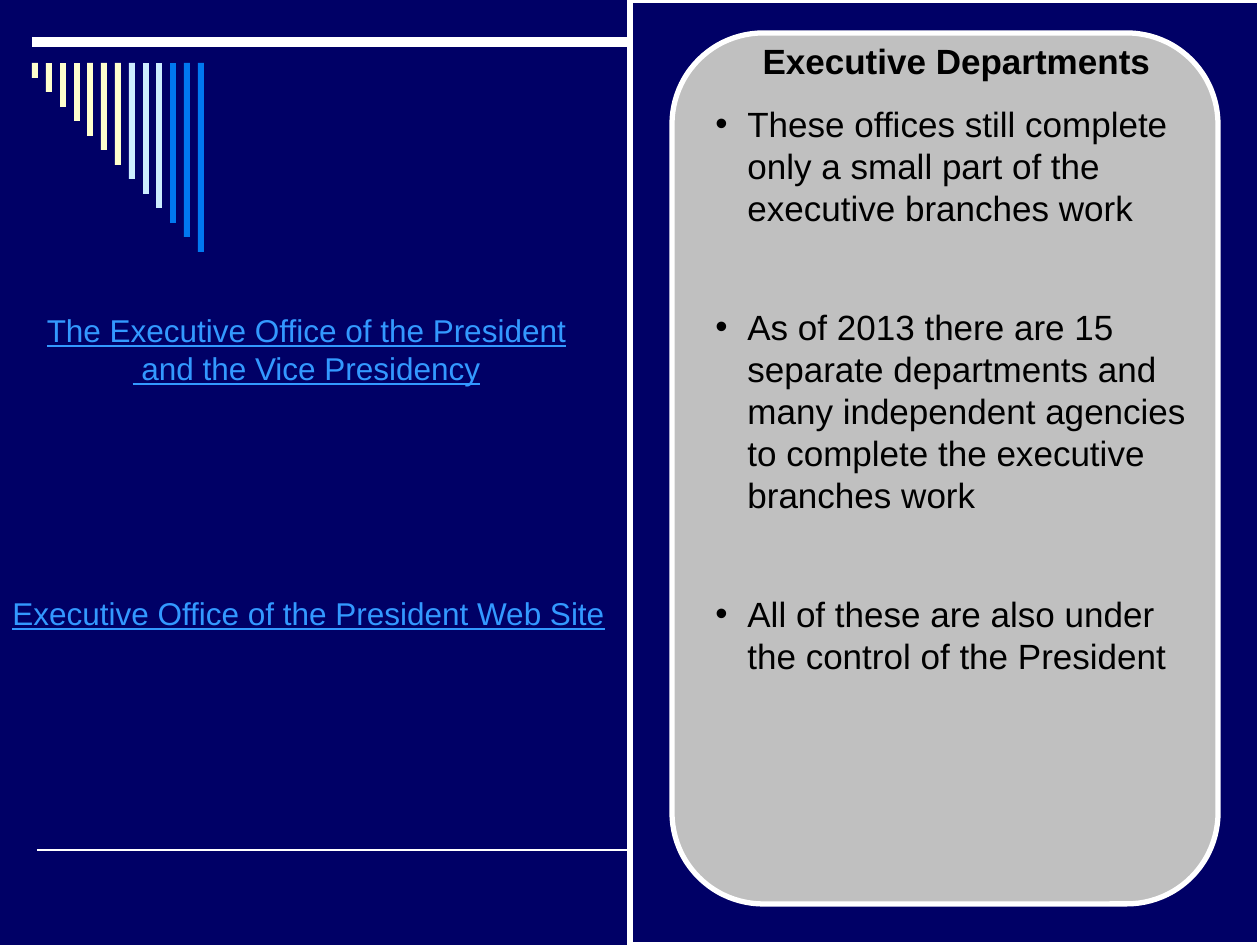
from dataclasses import dataclass

import lxml.etree
import pptx
import pptx.dml.color
import pptx.enum.shapes
import pptx.enum.text
import pptx.oxml.ns
import pptx.util

SHAPE = pptx.enum.shapes.MSO_SHAPE
ALIGN = pptx.enum.text.PP_ALIGN
PAGE_WIDTH, PAGE_HEIGHT = 1260, 945


@dataclass(frozen=True)
class Theme:
    font: str = "Arial"
    navy: str = "000066"
    white: str = "FFFFFF"
    cream: str = "FFFFCC"
    ice: str = "CCECFF"
    blue: str = "0078F0"
    link: str = "3399FF"
    card: str = "C0C0C0"
    ink: str = "000000"
    body_size: int = 20
    link_size: int = 18
    outline: int = 3
    thick_rule: int = 6
    thin_rule: int = 1
    bullet_gap: int = 44


THEME = Theme()


def px(length):
    return pptx.util.Emu(round(length * 914400 / 126))


def rgb(value):
    return pptx.dml.color.RGBColor.from_string(value)


def add_block(page, kind, box, fill, outlined=False):
    block = page.shapes.add_shape(kind, *map(px, box))
    block.shadow.inherit = False
    block.fill.solid()
    block.fill.fore_color.rgb = rgb(fill)
    if outlined:
        block.line.color.rgb = rgb(THEME.white)
        block.line.width = pptx.util.Pt(THEME.outline)
    else:
        block.line.fill.background()
    return block


def add_rule(page, left, right, y, weight):
    rule = page.shapes.add_connector(
        pptx.enum.shapes.MSO_CONNECTOR.STRAIGHT, px(left), px(y), px(right), px(y))
    rule.line.color.rgb = rgb(THEME.white)
    rule.line.width = pptx.util.Pt(weight)
    lxml.etree.SubElement(rule.element.spPr, pptx.oxml.ns.qn("a:effectLst"))


def add_span(para, text, size, color, bold=False, underline=False):
    span = para.add_run()
    span.text = text
    span.font.name = THEME.font
    span.font.size = pptx.util.Pt(size)
    span.font.color.rgb = rgb(color)
    span.font.bold = bold
    span.font.underline = underline


def add_text(page, box, lines, size, color, align=ALIGN.LEFT, wrap=True, underline=False):
    """Add a text box with one paragraph for each line; return its paragraphs."""
    frame = page.shapes.add_textbox(*map(px, box)).text_frame
    frame.word_wrap = wrap
    for index, line in enumerate(lines):
        para = frame.add_paragraph() if index else frame.paragraphs[0]
        para.alignment = align
        add_span(para, line, size, color, underline=underline)
    return frame.paragraphs


def set_bullet(para, indent):
    props = para._p.get_or_add_pPr()
    props.set("marL", str(px(indent)))
    props.set("indent", str(-px(indent)))
    font = lxml.etree.SubElement(props, pptx.oxml.ns.qn("a:buFont"))
    font.set("typeface", THEME.font)
    mark = lxml.etree.SubElement(props, pptx.oxml.ns.qn("a:buChar"))
    mark.set("char", "•")


def draw_backdrop(page, box):
    left, top, width, height = box
    page.background.fill.solid()
    page.background.fill.fore_color.rgb = rgb(THEME.navy)
    add_rule(page, left + 37, left + width - 37, top + 850, THEME.thin_rule)
    add_rule(page, left + 32, left + width - 42, top + 42, THEME.thick_rule)


def draw_bars(page, box):
    """Thirteen hanging bars that lengthen evenly from left to right."""
    left, top, width, height = box
    colors = [THEME.cream] * 7 + [THEME.ice] * 3 + [THEME.blue] * 3
    bar_width = 6
    step = (width - bar_width) / (len(colors) - 1)
    for index, color in enumerate(colors):
        bar_height = round(height * (index + 1) / len(colors))
        add_block(page, SHAPE.RECTANGLE,
                  (left + round(index * step), top, bar_width, bar_height), color)


def draw_links(page, box):
    left, top, width, height = box
    style = dict(size=THEME.link_size, color=THEME.link, underline=True)
    add_text(page, (left, top + 588, width, 50),
             ["Executive Office of the President Web Site"], **style)
    add_text(page, (left + 32, top + 305, 549, 89),
             ["The Executive Office of the President", " and the Vice Presidency"],
             align=ALIGN.CENTER, wrap=False, **style)


def draw_departments(page, box):
    left, top, width, height = box
    # Panel and rounded card
    add_block(page, SHAPE.RECTANGLE, box, THEME.navy, outlined=True)
    card = add_block(page, SHAPE.ROUNDED_RECTANGLE,
                     (left + 42, top + 33, 546, 871), THEME.card, outlined=True)
    card.adjustments[0] = 0.167

    # Title, brought in front of the card
    title = page.shapes.title
    title.left, title.top, title.width, title.height = map(
        px, (left + 82, top + 33, 489, 54))
    title.element.getparent().append(title.element)
    frame = title.text_frame
    frame.word_wrap = True
    frame.auto_size = pptx.enum.text.MSO_AUTO_SIZE.NONE
    frame.vertical_anchor = pptx.enum.text.MSO_ANCHOR.TOP
    para = frame.paragraphs[0]
    para.alignment = ALIGN.CENTER
    add_span(para, "Executive Departments", THEME.body_size, THEME.ink, bold=True)

    # Bulleted points
    points = [
        "These offices still complete only a small part of the executive branches work",
        "As of 2013 there are 15 separate departments and many independent agencies "
        "to complete the executive branches work",
        "All of these are also under the control of the President",
    ]
    paras = add_text(page, (left + 73, top + 96, 504, 606), points,
                     THEME.body_size, THEME.ink)
    for index, para in enumerate(paras):
        para.space_before = pptx.util.Pt(THEME.bullet_gap if index else 0)
        set_bullet(para, 32)


def main():
    deck = pptx.Presentation()
    deck.slide_width, deck.slide_height = px(PAGE_WIDTH), px(PAGE_HEIGHT)
    page = deck.slides.add_slide(deck.slide_layouts.get_by_name("Title Only"))
    half = PAGE_WIDTH // 2
    draw_backdrop(page, (0, 0, PAGE_WIDTH, PAGE_HEIGHT))
    draw_bars(page, (32, 63, 172, 189))
    draw_departments(page, (half, 0, half, PAGE_HEIGHT))
    draw_links(page, (0, 0, half, PAGE_HEIGHT))
    deck.save("out.pptx")


if __name__ == "__main__":
    main()
